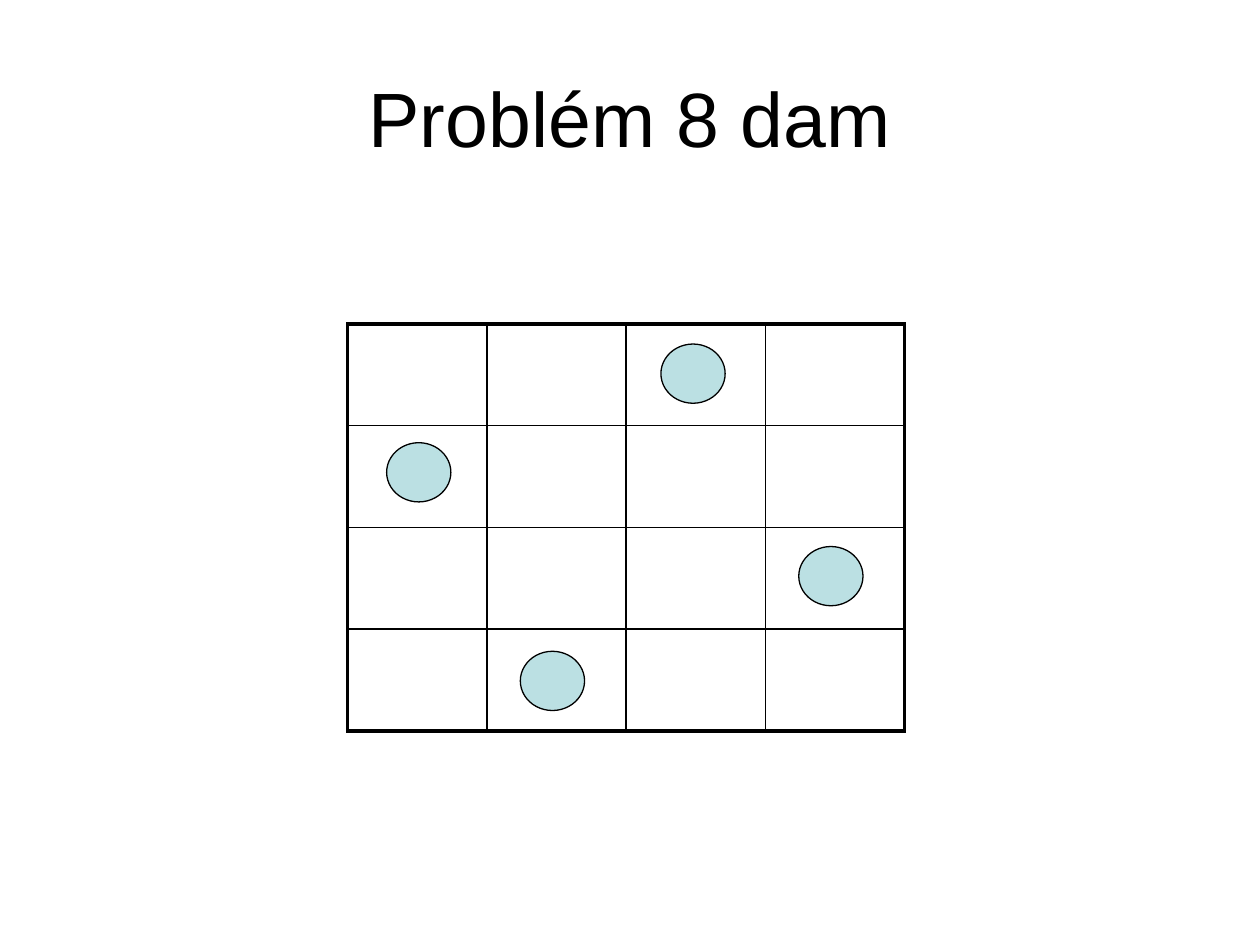
from dataclasses import dataclass

from lxml.etree import SubElement
from pptx import Presentation
from pptx.dml.color import RGBColor
from pptx.enum.shapes import MSO_SHAPE
from pptx.enum.text import MSO_ANCHOR, PP_ALIGN
from pptx.oxml.ns import qn
from pptx.slide import Slide
from pptx.table import _Cell
from pptx.util import Inches, Pt


@dataclass(frozen=True)
class Theme:
    font: str = "Arial"
    title_size: float = 44
    ink: str = "000000"
    paper: str = "FFFFFF"
    queen_fill: str = "BBE0E3"
    queen_line: float = 0.75
    inner_line: float = 1
    outer_line: float = 2.25


@dataclass(frozen=True)
class Board:
    left: float = 2.76
    top: float = 2.57
    width: float = 4.42
    height: float = 3.23
    size: int = 4

    @property
    def column_width(self) -> float:
        return self.width / self.size

    @property
    def row_height(self) -> float:
        return self.height / self.size


@dataclass(frozen=True)
class Queen:
    """Centre of a queen, counted in columns and rows of the board."""
    column: float
    row: float
    width: float = 0.51
    height: float = 0.47


THEME = Theme()
BOARD = Board()
QUEENS = [Queen(1.47, 3.51), Queen(3.47, 2.48), Queen(0.51, 1.46), Queen(2.48, 0.49)]


def add_title(slide: Slide, text: str) -> None:
    title = slide.shapes.title
    title.left, title.top = Inches(0.5), Inches(0.3)
    title.width, title.height = Inches(9), Inches(1.25)
    title.text_frame.vertical_anchor = MSO_ANCHOR.MIDDLE
    paragraph = title.text_frame.paragraphs[0]
    paragraph.alignment = PP_ALIGN.CENTER
    run = paragraph.add_run()
    run.text = text
    run.font.name = THEME.font
    run.font.size = Pt(THEME.title_size)
    run.font.color.rgb = RGBColor.from_string(THEME.ink)


def set_border(cell: _Cell, side: str, points: float) -> None:
    properties = cell._tc.get_or_add_tcPr()
    line = SubElement(properties, qn(f"a:ln{side}"), w=str(Pt(points)))
    fill = SubElement(line, qn("a:solidFill"))
    SubElement(fill, qn("a:srgbClr"), val=THEME.ink)


def add_board(slide: Slide, board: Board) -> None:
    frame = slide.shapes.add_table(
        board.size, board.size, Inches(board.left), Inches(board.top),
        Inches(board.width), Inches(board.height))
    table = frame.table
    table.first_row = table.horz_banding = False
    for column in table.columns:
        column.width = Inches(board.column_width)
    for row in table.rows:
        row.height = Inches(board.row_height)

    # Heavy lines around the board, thin lines between the squares
    last = board.size - 1
    for row in range(board.size):
        for column in range(board.size):
            cell = table.cell(row, column)
            on_edge = {"L": column == 0, "R": column == last,
                       "T": row == 0, "B": row == last}
            for side, outer in on_edge.items():
                set_border(cell, side, THEME.outer_line if outer else THEME.inner_line)
            cell.fill.background()


def add_queen(slide: Slide, board: Board, queen: Queen) -> None:
    left = board.left + queen.column * board.column_width - queen.width / 2
    top = board.top + queen.row * board.row_height - queen.height / 2
    shape = slide.shapes.add_shape(
        MSO_SHAPE.OVAL, Inches(left), Inches(top),
        Inches(queen.width), Inches(queen.height))
    shape.shadow.inherit = False
    shape.fill.solid()
    shape.fill.fore_color.rgb = RGBColor.from_string(THEME.queen_fill)
    shape.line.color.rgb = RGBColor.from_string(THEME.ink)
    shape.line.width = Pt(THEME.queen_line)


def main() -> None:
    presentation = Presentation()
    presentation.slide_width, presentation.slide_height = Inches(10), Inches(7.5)
    slide = presentation.slides.add_slide(presentation.slide_layouts.get_by_name("Title Only"))
    slide.background.fill.solid()
    slide.background.fill.fore_color.rgb = RGBColor.from_string(THEME.paper)

    add_title(slide, "Problém 8 dam")
    add_board(slide, BOARD)
    for queen in QUEENS:
        add_queen(slide, BOARD, queen)

    presentation.save("out.pptx")


if __name__ == "__main__":
    main()
